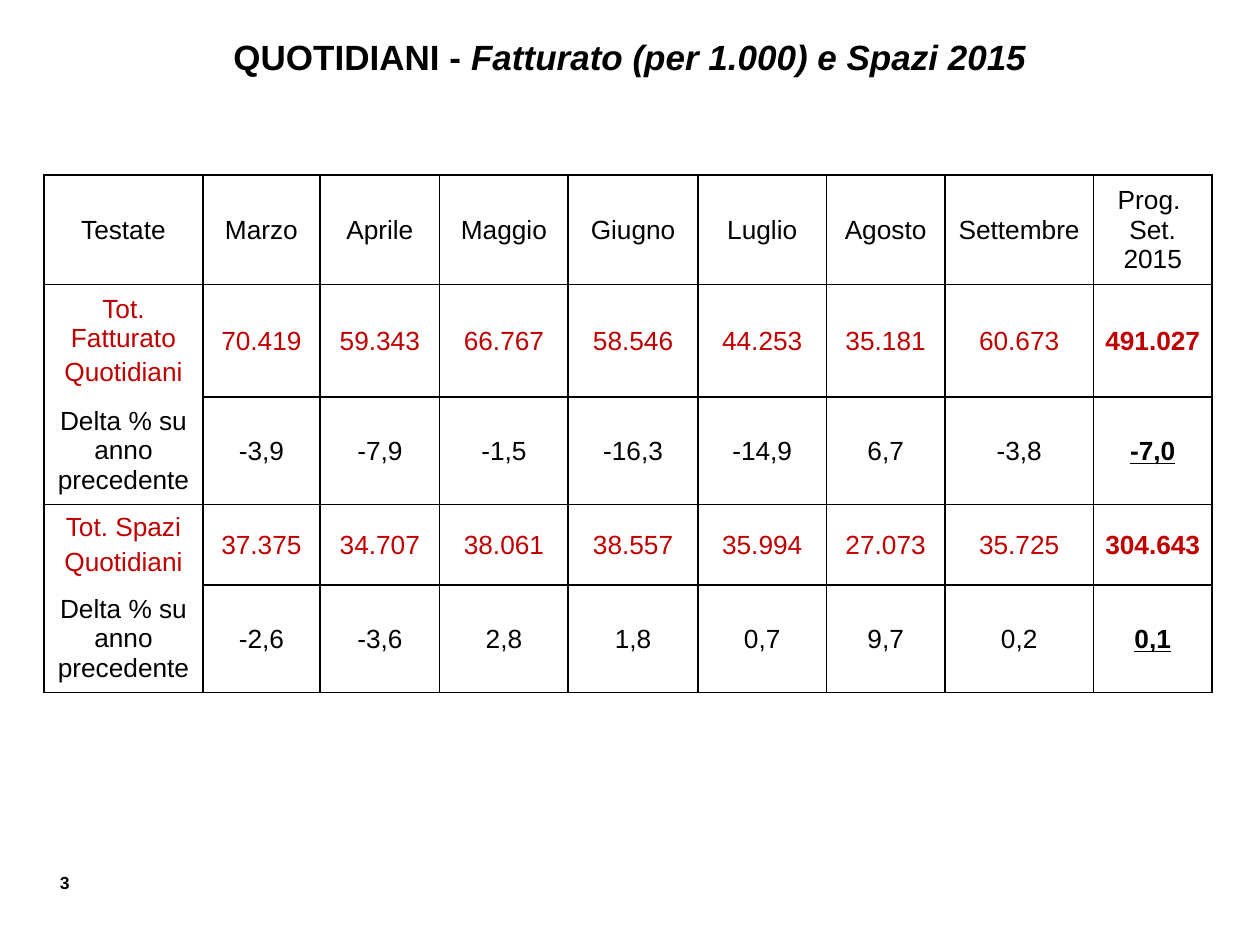
"""Build the slide on newspaper advertising turnover and space in 2015."""
from lxml.etree import SubElement, Element
from pptx import Presentation
from pptx.dml.color import RGBColor
from pptx.enum.text import MSO_ANCHOR as Anchor, PP_ALIGN as Align
from pptx.oxml.ns import qn
from pptx.util import Inches, Pt

COLORS = {"black": "000000", "red": "C00000", "white": "FFFFFF"}
FONT = "Arial"
TITLE = [("QUOTIDIANI - ", False), ("Fatturato (per 1.000) e Spazi 2015", True)]
PAGE_NUMBER = "3"

HEADER = [["Testate"], ["Marzo"], ["Aprile"], ["Maggio"], ["Giugno"], ["Luglio"],
          ["Agosto"], ["Settembre"], ["Prog. ", "Set.", "2015"]]
DELTA = ["Delta % su anno precedente"]
TOTALS = [
    (["Tot. Fatturato", "Quotidiani"],
     ["70.419", "59.343", "66.767", "58.546", "44.253", "35.181", "60.673", "491.027"]),
    (DELTA, ["-3,9", "-7,9", "-1,5", "-16,3", "-14,9", "6,7", "-3,8", "-7,0"]),
    (["Tot. Spazi", "Quotidiani"],
     ["37.375", "34.707", "38.061", "38.557", "35.994", "27.073", "35.725", "304.643"]),
    (DELTA, ["-2,6", "-3,6", "2,8", "1,8", "0,7", "9,7", "0,2", "0,1"]),
]
COLUMN_WIDTHS = [1.26, 0.93, 0.95, 1.02, 1.03, 1.02, 0.94, 1.18, 0.94]
ROW_HEIGHTS = [0.87, 0.89, 0.85, 0.64, 0.85]
WIDE_INSETS = (0.1, 0.05, 0.1, 0.05)
TIGHT_INSETS = (0.01, 0.01, 0.01, 0)


def add_run(para, text, size, color="black", bold=False, italic=False, underline=False):
    span = para.add_run()
    span.text = text
    font = span.font
    font.name, font.size = FONT, Pt(size)
    font.bold, font.italic, font.underline = bold, italic, underline
    font.color.rgb = RGBColor.from_string(COLORS[color])


def add_line(slide, place, align, runs, size):
    box = slide.shapes.add_textbox(*map(Inches, place))
    box.text_frame.word_wrap = True
    para = box.text_frame.paragraphs[0]
    para.alignment = align
    for text, italic in runs:
        add_run(para, text, size, bold=True, italic=italic)


def set_borders(cell, open_sides):
    properties = cell._tc.get_or_add_tcPr()
    for position, side in enumerate("LRTB"):
        line = Element(qn(f"a:ln{side}"), w=str(Pt(1)))
        if side in open_sides:
            SubElement(line, qn("a:noFill"))
        else:
            fill = SubElement(line, qn("a:solidFill"))
            SubElement(fill, qn("a:srgbClr"), val=COLORS["black"])
        properties.insert(position, line)


def fill_cell(cell, lines, insets, gap=0, open_sides="", **style):
    cell.fill.solid()
    cell.fill.fore_color.rgb = RGBColor.from_string(COLORS["white"])
    cell.vertical_anchor = Anchor.MIDDLE
    cell.margin_left, cell.margin_top, cell.margin_right, cell.margin_bottom = map(Inches, insets)
    set_borders(cell, open_sides)
    frame = cell.text_frame
    for index, text in enumerate(lines):
        para = frame.add_paragraph() if index else frame.paragraphs[0]
        para.alignment = Align.CENTER
        if index and gap:
            para.space_before = Pt(gap)
        add_run(para, text, 15, **style)


def add_totals_table(slide):
    frame = slide.shapes.add_table(
        len(ROW_HEIGHTS), len(COLUMN_WIDTHS), Inches(0.35), Inches(1.39),
        Inches(sum(COLUMN_WIDTHS)), Inches(sum(ROW_HEIGHTS)))
    table = frame.table
    table.first_row = table.horz_banding = False
    for column, width in zip(table.columns, COLUMN_WIDTHS):
        column.width = Inches(width)
    for row, height in zip(table.rows, ROW_HEIGHTS):
        row.height = Inches(height)
    for column, lines in enumerate(HEADER):
        fill_cell(table.cell(0, column), lines, WIDE_INSETS)
    for row, (label, values) in enumerate(TOTALS, 1):
        is_delta = label is DELTA
        color = "black" if is_delta else "red"
        fill_cell(table.cell(row, 0), label, WIDE_INSETS, gap=3,
                  open_sides="T" if is_delta else "B", color=color)
        for column, value in enumerate(values, 1):
            is_sum = column == len(values)
            fill_cell(table.cell(row, column), [value], TIGHT_INSETS, color=color,
                      bold=is_sum, underline=is_sum and is_delta)


def main():
    deck = Presentation()
    deck.slide_width, deck.slide_height = Inches(10), Inches(7.5)
    slide = deck.slides.add_slide(deck.slide_layouts[6])
    add_line(slide, (0.19, 6.87, 0.46, 0.27), Align.RIGHT, [(PAGE_NUMBER, False)], 10)
    add_line(slide, (0, 0.23, 10, 0.44), Align.CENTER, TITLE, 20)
    add_totals_table(slide)
    deck.save("out.pptx")


if __name__ == "__main__":
    main()
